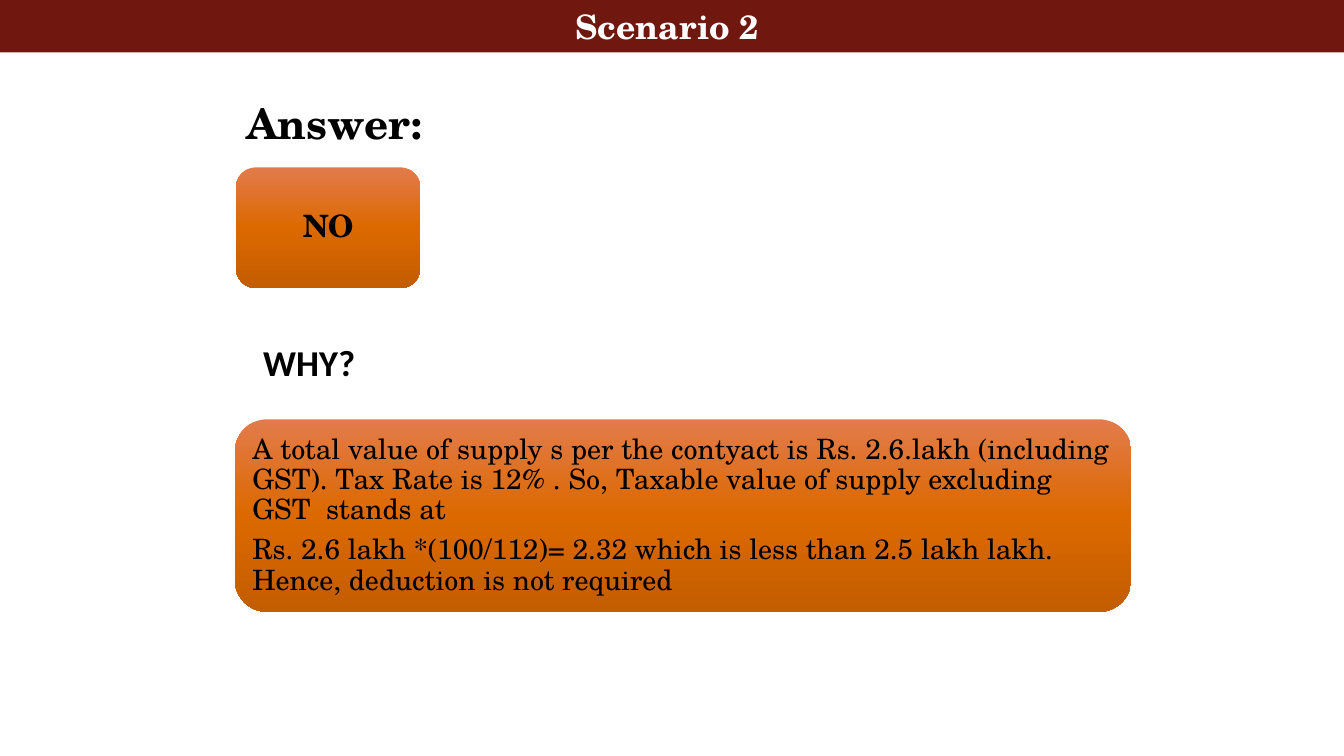
from copy import deepcopy
from dataclasses import dataclass

from lxml.etree import SubElement
from pptx import Presentation
from pptx.dml.color import RGBColor
from pptx.enum.shapes import MSO_SHAPE as Shape
from pptx.enum.text import MSO_ANCHOR as Anchor, MSO_AUTO_SIZE as Fit, PP_ALIGN as Align
from pptx.oxml.ns import qn
from pptx.util import Inches, Pt

COLORS = {"text": "000000", "light": "FFFFFF", "banner": "70180F",
          "top": "E27B4B", "mid": "DC6900", "base": "C35D00"}
SERIF = "TeX Gyre Schola"


@dataclass
class Style:
    size: float
    bold: bool = True
    font: str = SERIF
    color: str = "text"
    align: Align = Align.LEFT
    line: float = 0.9
    after: float = 0


@dataclass
class Card:
    box: tuple[float, float, float, float]
    lines: list[str]
    style: Style


CARDS = [
    Card((2.34, 1.66, 1.83, 1.2), ["NO"], Style(22, align=Align.CENTER)),
    Card((2.33, 4.16, 8.89, 1.91), [
        "A total value of supply s per the contyact is Rs. 2.6.lakh (including GST). "
        "Tax Rate is 12% . So, Taxable value of supply excluding GST  stands at",
        "Rs. 2.6 lakh *(100/112)= 2.32 which is less than 2.5 lakh lakh. "
        "Hence, deduction is not required",
    ], Style(20, bold=False, after=7)),
]


def color(name: str) -> RGBColor:
    return RGBColor.from_string(COLORS[name])


def place(shape, box: tuple) -> None:
    shape.left, shape.top, shape.width, shape.height = map(Inches, box)


def inset(frame, left: float, top: float, right: float, base: float) -> None:
    frame.margin_left, frame.margin_top = Inches(left), Inches(top)
    frame.margin_right, frame.margin_bottom = Inches(right), Inches(base)


def write(frame, lines: list[str], style: Style) -> None:
    frame.word_wrap = True
    frame.text = "\n".join(lines)
    for para in frame.paragraphs:
        para.alignment = style.align
        para.line_spacing = style.line
        para.space_before = Pt(0)
        para.space_after = Pt(style.after)
        para.font.size = Pt(style.size)
        para.font.bold = style.bold
        para.font.name = style.font
        para.font.color.rgb = color(style.color)


def shade(shape) -> None:
    shape.fill.gradient()
    shape.fill.gradient_angle = 270
    first = shape.element.spPr.find(f".//{qn('a:gs')}")
    first.addnext(deepcopy(first))
    tones = zip(shape.fill.gradient_stops, ("top", "mid", "base"), (0, 0.5, 1))
    for stop, name, pos in tones:
        stop.color.rgb = color(name)
        stop.position = pos


def add_block(slide, kind: Shape, box: tuple):
    shape = slide.shapes.add_shape(kind, *map(Inches, box))
    shape.shadow.inherit = False
    shape.line.fill.background()
    return shape


def add_card(slide, card: Card) -> None:
    shape = add_block(slide, Shape.ROUNDED_RECTANGLE, card.box)
    shade(shape)
    frame = shape.text_frame
    frame.vertical_anchor = Anchor.MIDDLE
    inset(frame, 0.08, 0.08, 0.08, 0.08)
    write(frame, card.lines, card.style)


def add_why(slide) -> None:
    box = slide.shapes.add_textbox(*map(Inches, (2.33, 3.38, 8.89, 1.18)))
    frame = box.text_frame
    inset(frame, 0.28, 0.04, 0.2, 0.04)
    para = frame.paragraphs[0]
    para.level = 1
    props = para._p.get_or_add_pPr()
    props.set("marL", str(Inches(0.25)))
    props.set("indent", str(Inches(-0.25)))
    SubElement(props, qn("a:buChar")).set("char", "•")
    write(frame, ["WHY?"], Style(26, font="Calibri"))


def add_banner(slide) -> None:
    shape = add_block(slide, Shape.RECTANGLE, (0, 0, 13.33, 0.52))
    shape.fill.solid()
    shape.fill.fore_color.rgb = color("banner")
    frame = shape.text_frame
    frame.vertical_anchor = Anchor.TOP
    frame.auto_size = Fit.SHAPE_TO_FIT_TEXT
    inset(frame, 0, 0.06, 0, 0.06)
    write(frame, ["Scenario 2 "], Style(24, color="light", align=Align.CENTER, line=1.0))


def main() -> None:
    deck = Presentation()
    deck.slide_width, deck.slide_height = Inches(13.33), Inches(7.5)
    slide = deck.slides.add_slide(deck.slide_layouts[5])
    title = slide.shapes.title
    place(title, (2.34, 0.52, 11.5, 1.45))
    title.text_frame.vertical_anchor = Anchor.MIDDLE
    write(title.text_frame, ["Answer:"], Style(30))
    add_card(slide, CARDS[0])
    add_why(slide)
    add_card(slide, CARDS[1])
    add_banner(slide)
    deck.save("out.pptx")


if __name__ == "__main__":
    main()
